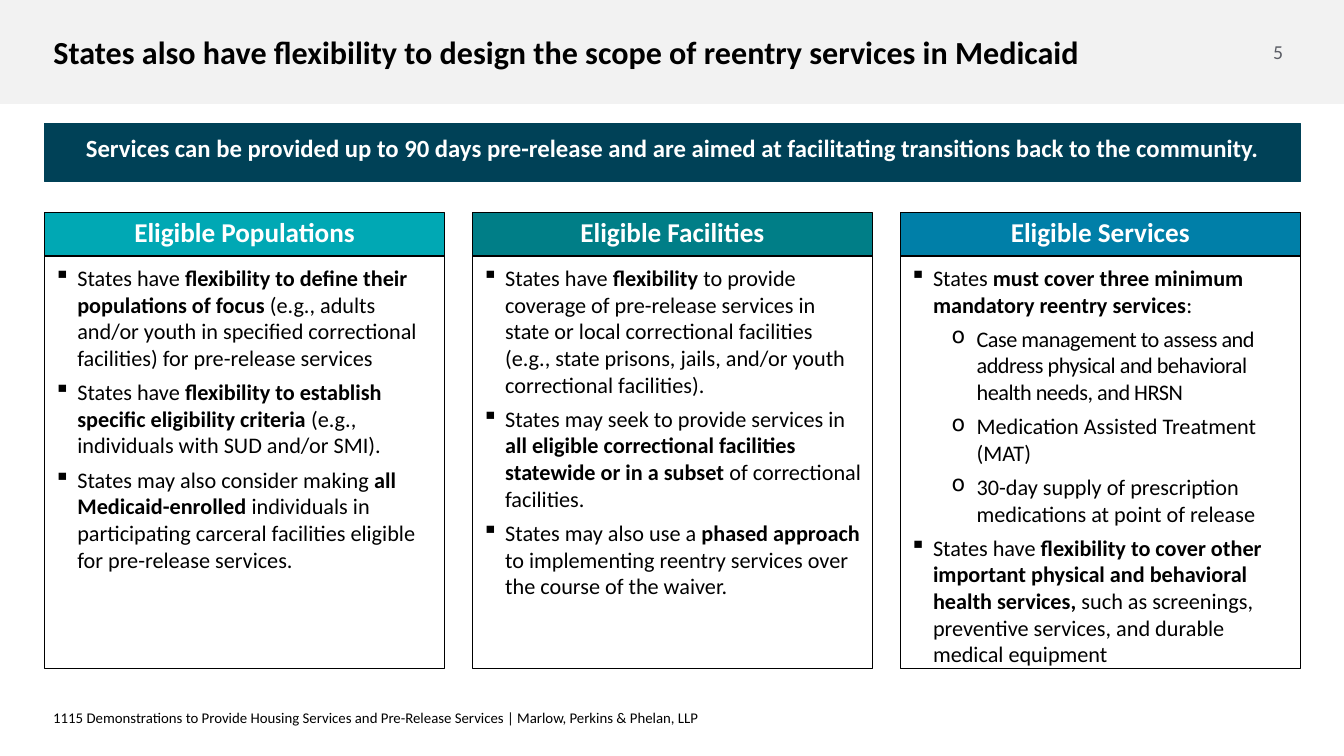
from dataclasses import dataclass

from lxml import etree
from pptx import Presentation
from pptx.dml.color import RGBColor
from pptx.enum.shapes import MSO_SHAPE
from pptx.enum.text import MSO_ANCHOR, PP_ALIGN
from pptx.oxml.ns import qn
from pptx.util import Inches, Pt

RECTANGLE = MSO_SHAPE.RECTANGLE
TOP, MIDDLE = MSO_ANCHOR.TOP, MSO_ANCHOR.MIDDLE
LEFT, CENTER = PP_ALIGN.LEFT, PP_ALIGN.CENTER


@dataclass(frozen=True)
class Theme:
    """Font, colours and type sizes of the slide."""
    font: str = "Calibri"
    black: str = "000000"
    white: str = "FFFFFF"
    page_grey: str = "5C5E66"
    title_band: str = "F2F2F2"
    banner: str = "004157"
    populations: str = "00A8B4"
    facilities: str = "007E87"
    services: str = "007FA8"
    title_size: int = 26
    header_size: int = 22
    banner_size: int = 20
    body_size: int = 18
    page_size: int = 16
    footer_size: int = 12


THEME = Theme()
SLIDE_WIDTH, SLIDE_HEIGHT = 15.11, 8.5
MARGIN, COLUMN_WIDTH, COLUMN_STEP = 0.5, 4.5, 4.81
HEADER_TOP, HEADER_HEIGHT = 2.39, 0.49
BODY_TOP, BODY_HEIGHT = 2.87, 4.65
HEADER_INSETS = (0.11, 0, 0.11, 0.06)
BODY_INSETS = (0.11, 0.1, 0.11, 0.06)
TITLE_INSETS = (0.11, 0.06, 0.11, 0.06)
FOOTER_INSETS = (0.1, 0.05, 0.1, 0.05)
NO_INSETS = (0, 0, 0, 0)
BULLETS = (("▪", 0.26, 0.26), ("o", 0.75, 0.28))

# Each bullet holds its level, letter spacing, and text pieces that alternate regular and bold.
COLUMNS = (
    ("Eligible Populations", THEME.populations, (
        (0, 0, ("States have ", "flexibility to define their populations of focus ",
                "(e.g., adults and/or youth in specified correctional facilities) "
                "for pre-release services")),
        (0, 0, ("States have ", "flexibility to establish specific eligibility criteria ",
                "(e.g., individuals with SUD and/or SMI).")),
        (0, 0, ("States may also consider making ", "all Medicaid-enrolled ",
                "individuals in participating carceral facilities eligible "
                "for pre-release services.")),
    )),
    ("Eligible Facilities", THEME.facilities, (
        (0, 0, ("States have ", "flexibility",
                " to provide coverage of pre-release services in state or local correctional "
                "facilities (e.g., state prisons, jails, and/or youth correctional facilities).")),
        (0, 0, ("States may seek to provide services in ",
                "all eligible correctional facilities statewide or in a subset",
                " of correctional facilities.")),
        (0, 0, ("States may also use a ", "phased approach",
                " to implementing reentry services over the course of the waiver.")),
    )),
    ("Eligible Services", THEME.services, (
        (0, 0, ("States ", "must cover three minimum mandatory reentry services", ":")),
        (1, -0.4, ("Case management to assess and address physical and behavioral "
                   "health needs, and HRSN",)),
        (1, 0, ("Medication Assisted Treatment (MAT)",)),
        (1, 0, ("30-day supply of prescription medications at point of release",)),
        (0, 0, ("States have ",
                "flexibility to cover other important physical and behavioral health services,",
                " such as screenings, preventive services, and durable medical equipment")),
    )),
)


def add_box(slide, left, top, width, height, fill=None, line=None):
    """Add a rectangle with an optional fill and outline."""
    shape = slide.shapes.add_shape(
        RECTANGLE, Inches(left), Inches(top), Inches(width), Inches(height))
    shape.shadow.inherit = False
    if fill:
        shape.fill.solid()
        shape.fill.fore_color.rgb = RGBColor.from_string(fill)
    else:
        shape.fill.background()
    if line:
        shape.line.color.rgb = RGBColor.from_string(line)
        shape.line.width = Pt(0.75)
    else:
        shape.line.fill.background()
    return shape


def prepare_frame(shape, insets, anchor, wrap=True):
    """Set the insets, anchor and wrapping of a shape and return its text frame."""
    frame = shape.text_frame
    frame.margin_left, frame.margin_top, frame.margin_right, frame.margin_bottom = map(
        Inches, insets)
    frame.vertical_anchor = anchor
    frame.word_wrap = wrap
    return frame


def add_run(paragraph, text, size, color, bold=False):
    """Add one styled run to a paragraph."""
    run = paragraph.add_run()
    run.text = text
    run.font.name = THEME.font
    run.font.size = Pt(size)
    run.font.bold = bold
    run.font.color.rgb = RGBColor.from_string(color)
    return run


def write_line(shape, text, size, color, insets, anchor=MIDDLE, align=CENTER,
               bold=True, wrap=True):
    """Write a single paragraph into a shape and return it."""
    paragraph = prepare_frame(shape, insets, anchor, wrap).paragraphs[0]
    paragraph.alignment = align
    add_run(paragraph, text, size, color, bold)
    return paragraph


def add_label(slide, left, top, width, height, text, size, color, insets, **options):
    """Add a text box holding a single paragraph."""
    shape = slide.shapes.add_textbox(Inches(left), Inches(top), Inches(width), Inches(height))
    return write_line(shape, text, size, color, insets, **options)


def set_bullet(paragraph, level):
    """Give a paragraph the bullet and hanging indent of its level."""
    character, margin, hanging = BULLETS[level]
    paragraph.level = level
    properties = paragraph._p.get_or_add_pPr()
    properties.set("marL", str(Inches(margin)))
    properties.set("indent", str(-Inches(hanging)))
    color = etree.SubElement(properties, qn("a:buClr"))
    etree.SubElement(color, qn("a:srgbClr")).set("val", THEME.black)
    etree.SubElement(properties, qn("a:buChar")).set("char", character)


def write_bullets(shape, bullets):
    """Fill a shape with bulleted paragraphs."""
    frame = prepare_frame(shape, BODY_INSETS, TOP)
    for index, (level, letter_spacing, pieces) in enumerate(bullets):
        paragraph = frame.add_paragraph() if index else frame.paragraphs[0]
        set_bullet(paragraph, level)
        paragraph.alignment = LEFT
        paragraph.space_after = Pt(6)
        for position, piece in enumerate(pieces):
            run = add_run(paragraph, piece, THEME.body_size, THEME.black, position % 2 == 1)
            if letter_spacing:
                run._r.get_or_add_rPr().set("spc", str(round(letter_spacing * 100)))


def add_column(slide, left, heading, color, bullets):
    """Add a coloured heading above an outlined list."""
    header = add_box(slide, left, HEADER_TOP, COLUMN_WIDTH, HEADER_HEIGHT, color, THEME.black)
    write_line(header, heading, THEME.header_size, THEME.white, HEADER_INSETS)
    body = add_box(slide, left, BODY_TOP, COLUMN_WIDTH, BODY_HEIGHT, line=THEME.black)
    write_bullets(body, bullets)


def main():
    """Build the slide and save it."""
    presentation = Presentation()
    presentation.slide_width = Inches(SLIDE_WIDTH)
    presentation.slide_height = Inches(SLIDE_HEIGHT)
    slide = presentation.slides.add_slide(presentation.slide_layouts[6])

    add_box(slide, 0, 0, SLIDE_WIDTH, 1.17, THEME.title_band)
    add_label(slide, 0.49, 0.26, 13.52, 0.65,
              "States also have flexibility to design the scope of reentry services in Medicaid",
              THEME.title_size, THEME.black, TITLE_INSETS, align=LEFT)
    add_label(slide, 14.12, 0.26, 0.5, 0.65, "5", THEME.page_size, THEME.page_grey,
              NO_INSETS, bold=False, wrap=False)

    banner = add_box(slide, MARGIN, 1.39, 14.12, 0.65, THEME.banner, THEME.banner)
    write_line(banner, "Services can be provided up to 90 days pre-release and are aimed at "
               "facilitating transitions back to the community.",
               THEME.banner_size, THEME.white, BODY_INSETS, anchor=TOP)

    for index, column in enumerate(COLUMNS):
        add_column(slide, MARGIN + index * COLUMN_STEP, *column)

    footer = add_label(slide, MARGIN, 7.96, 12.64, 0.25,
                       "1115 Demonstrations to Provide Housing Services and Pre-Release Services "
                       "| Marlow, Perkins & Phelan, LLP", THEME.footer_size, THEME.black,
                       FOOTER_INSETS, anchor=TOP, align=LEFT, bold=False)
    footer.line_spacing = 0.8
    presentation.save("out.pptx")


if __name__ == "__main__":
    main()
